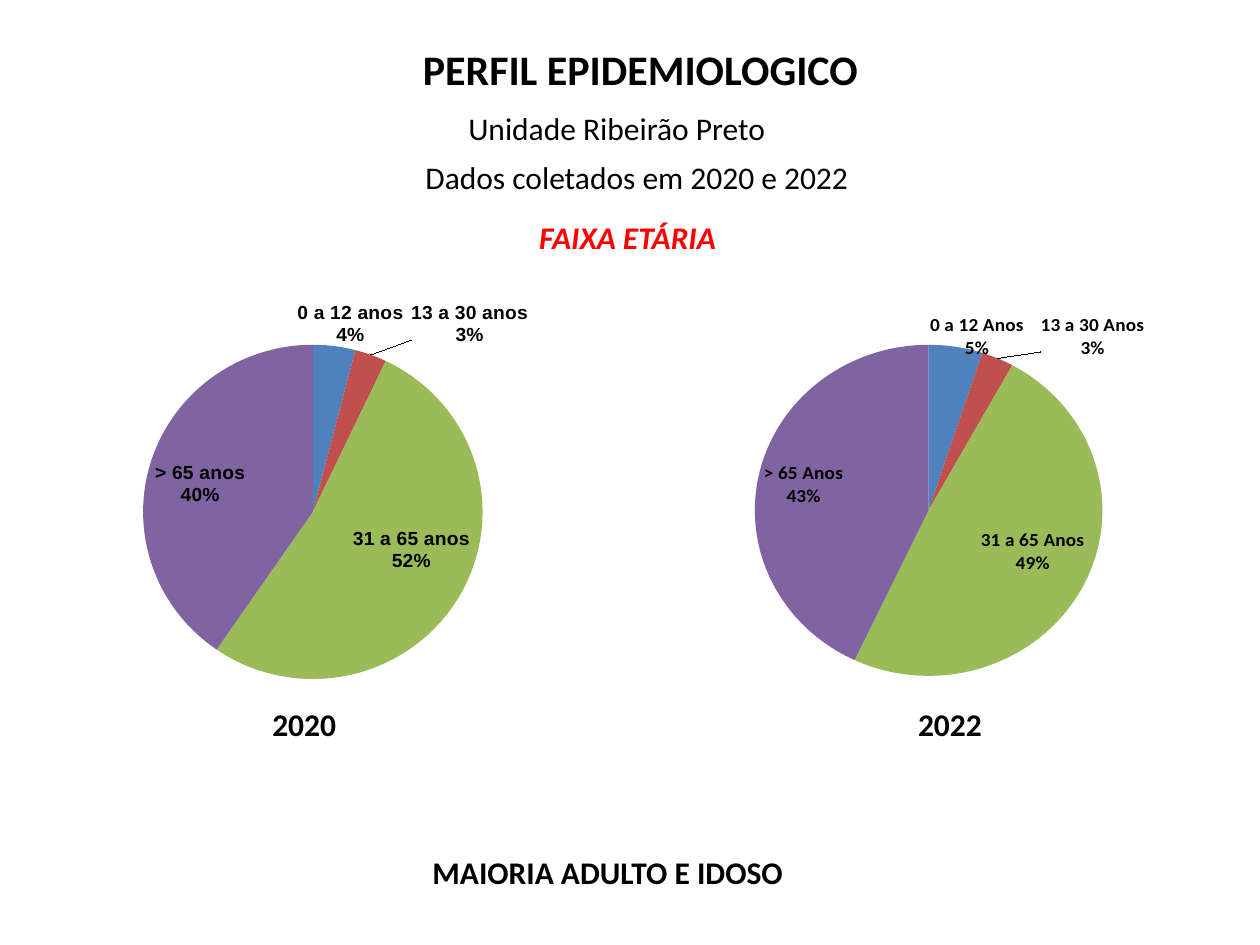
from pptx import Presentation
from pptx.chart.data import CategoryChartData
from pptx.dml.color import RGBColor
from pptx.enum.chart import XL_CHART_TYPE, XL_LABEL_POSITION
from pptx.enum.text import MSO_ANCHOR, MSO_AUTO_SIZE, PP_ALIGN
from pptx.oxml import parse_xml
from pptx.oxml.ns import nsdecls, qn
from pptx.util import Pt

COLORS = {"text": "000000", "accent": "FF0000"}
SLICE_COLORS = {"child": "4F81BD", "young": "C0504D", "adult": "9BBB59", "senior": "8064A2"}
POSITIONS = [XL_LABEL_POSITION.OUTSIDE_END] * 2 + [XL_LABEL_POSITION.CENTER] * 2


def format_font(font, size=18, color="text", name="Calibri", bold=False, italic=False):
    font.size, font.name, font.bold, font.italic = Pt(size), name, bold, italic
    font.color.rgb = RGBColor.from_string(COLORS[color])


def write_text(text_frame, text, align=PP_ALIGN.LEFT, **font_format):
    paragraph = text_frame.paragraphs[0]
    paragraph.alignment = align
    run = paragraph.add_run()
    run.text = text
    format_font(run.font, **font_format)


def manual_layout(x, y, width=None, height=None):
    values = {"x": x, "y": y}
    modes = ""
    if width is not None:
        values.update(w=width, h=height)
        modes = '<c:layoutTarget val="inner"/><c:xMode val="edge"/><c:yMode val="edge"/>'
    children = "".join(f'<c:{key} val="{value}"/>' for key, value in values.items())
    return parse_xml(
        f'<c:layout {nsdecls("c")}><c:manualLayout>{modes}{children}</c:manualLayout></c:layout>'
    )


class ProfileSlide:
    """Holds the current slide and draws each kind of element in its style."""

    def __init__(self, presentation):
        self.slide = presentation.slides.add_slide(presentation.slide_layouts[5])

    def title(self, text, left, top, width, height):
        shape = self.slide.shapes.title
        shape.left, shape.top, shape.width, shape.height = map(Pt, (left, top, width, height))
        text_frame = shape.text_frame
        text_frame.word_wrap = True
        text_frame.auto_size = MSO_AUTO_SIZE.SHAPE_TO_FIT_TEXT
        text_frame.vertical_anchor = MSO_ANCHOR.TOP
        write_text(text_frame, text, align=PP_ALIGN.CENTER, size=24, bold=True)

    def caption(self, text, left, top, width, wrap=False, **font_format):
        shape = self.slide.shapes.add_textbox(Pt(left), Pt(top), Pt(width), Pt(29))
        shape.text_frame.word_wrap = wrap
        shape.text_frame.auto_size = MSO_AUTO_SIZE.SHAPE_TO_FIT_TEXT
        write_text(shape.text_frame, text, **font_format)

    def pie(self, categories, values, left, width, plot_layout, label_font, label_offsets):
        data = CategoryChartData()
        data.categories = categories
        data.add_series("Series 1", values)
        chart = self.slide.shapes.add_chart(
            XL_CHART_TYPE.PIE, Pt(left), Pt(168.5), Pt(width), Pt(231), data
        ).chart
        chart.has_legend = chart.has_title = False
        format_font(chart.font, size=10)
        plot = chart.plots[0]
        plot.vary_by_categories = True
        plot_area = chart.element.find(".//" + qn("c:plotArea"))
        for layout in plot_area.findall(qn("c:layout")):
            plot_area.remove(layout)
        plot_area.insert(0, manual_layout(*plot_layout))
        series = plot.series[0]
        labels = series.data_labels
        labels.show_category_name = labels.show_value = True
        labels.number_format, labels.number_format_is_linked = '0"%"', False
        format_font(labels.font, size=11, name=label_font, bold=True)
        for index, color in enumerate(SLICE_COLORS.values()):
            point = series.points[index]
            point.format.fill.solid()
            point.format.fill.fore_color.rgb = RGBColor.from_string(color)
            format_font(point.data_label.font, size=11, name=label_font, bold=True)
            point.data_label.position = POSITIONS[index]
        for label, offset in zip(chart.element.iter(qn("c:dLbl")), label_offsets):
            label.insert(1, manual_layout(*offset))
            label.insert(2, parse_xml(
                f'<c:numFmt {nsdecls("c")} formatCode="0&quot;%&quot;" sourceLinked="0"/>'
            ))
            for tag, shown in (("showVal", 1), ("showCatName", 1), ("showPercent", 0)):
                label.find(qn(f"c:{tag}")).set("val", str(shown))
            label.append(parse_xml(f'<c:separator {nsdecls("c")}>\n</c:separator>'))


def main():
    presentation = Presentation()
    presentation.slide_width, presentation.slide_height = Pt(720), Pt(540)
    page = ProfileSlide(presentation)
    page.title("PERFIL EPIDEMIOLOGICO", 148.5, 21.5, 435, 36)
    page.caption("MAIORIA ADULTO E IDOSO", 240, 484, 217, bold=True)
    page.caption("FAIXA ETÁRIA", 301, 121, 117, color="accent", bold=True, italic=True)
    page.caption("Unidade Ribeirão Preto", 260.5, 58.5, 186.5)
    page.caption("Dados coletados em 2020 e 2022", 236, 86.5, 259)
    page.caption("2020", 148.5, 399.5, 51, bold=True)
    page.caption("2022", 517.5, 399.5, 65.5, wrap=True, bold=True)
    ages = ["0 a 12", "13 a 30", "31 a 65", "> 65"]
    page.pie(
        [f"{age} anos" for age in ages], [4, 3, 52, 40], -12, 360,
        (0.09, 0.11, 0.88, 0.84), "Arial",
        [(-0.06, 0), (0.06, -0.02), (0.04, -0.01), (-0.05, -0.01)],
    )
    page.pie(
        [f"{age} Anos" for age in ages], [5, 3, 49, 43], 337.5, 382.5,
        (0.05, 0.08, 0.91, 0.86), "Calibri",
        [(-0.04, 0.04), (0.06, 0), (0.04, 0.01), (-0.06, -0.02)],
    )
    presentation.save("out.pptx")


if __name__ == "__main__":
    main()
